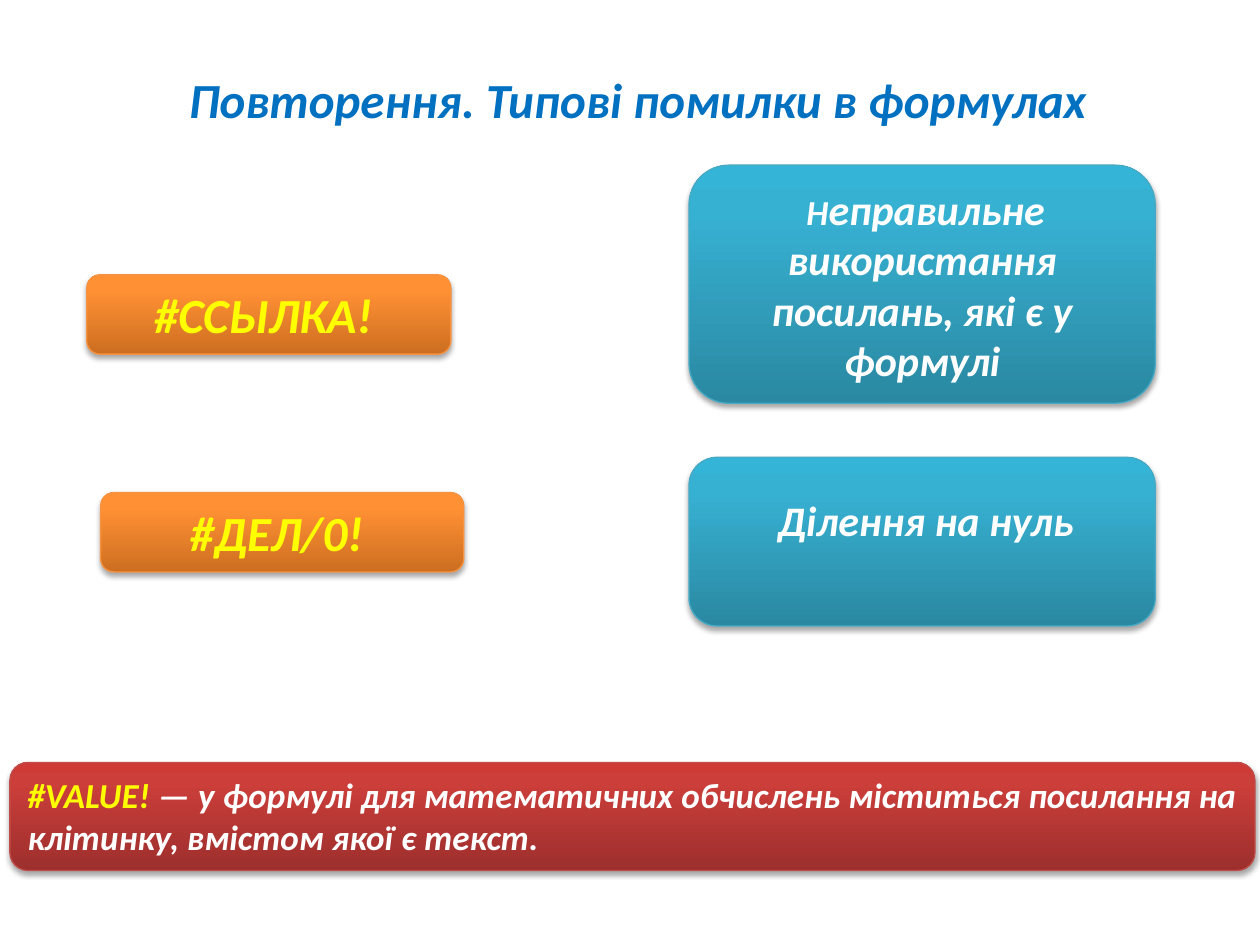
"""Build a slide that reviews typical spreadsheet formula errors."""
from dataclasses import dataclass
from typing import NamedTuple

from lxml.etree import fromstring
from pptx import Presentation
from pptx.dml.color import RGBColor
from pptx.enum.shapes import MSO_SHAPE as Preset
from pptx.enum.text import MSO_ANCHOR as Anchor
from pptx.enum.text import MSO_AUTO_SIZE as Fit
from pptx.enum.text import PP_ALIGN as Align
from pptx.oxml.ns import nsdecls
from pptx.util import Cm, Pt

COLORS = {
    "title": "0070C0",
    "title_edge": "1E7CEE",
    "code": "FFFF00",
    "text": "FFFFFF",
    "shadow": "000000",
    "orange_line": "F69240",
    "red_line": "BF4C48",
    "teal_line": "46AAC5",
    "orange_dark": "CC6E20",
    "orange_mid": "FF9034",
    "orange_light": "FF9136",
    "red_dark": "9C2F2D",
    "red_mid": "CB3E3A",
    "red_light": "CE3B37",
    "teal_dark": "2A88A2",
    "teal_mid": "37B1D2",
    "teal_light": "34B4D6",
}
STOPS = {"dark": 0, "mid": 80000, "light": 100000}
FONT_FORMAT = {"name": "Calibri", "bold": True, "italic": True}
GROWING = {"word_wrap": True, "auto_size": Fit.SHAPE_TO_FIT_TEXT, "vertical_anchor": Anchor.TOP}
CENTERED = {"word_wrap": True, "auto_size": Fit.NONE, "vertical_anchor": Anchor.MIDDLE}
TITLE_FORMAT = {"word_wrap": False, "auto_size": Fit.SHAPE_TO_FIT_TEXT}


class Span(NamedTuple):
    """A piece of text with its size in points and its colour name."""

    text: str
    size: int
    color: str


@dataclass
class Card:
    """A rounded card, with its place in centimetres."""

    place: tuple[float, float, float, float]
    tone: str
    spans: list[Span]
    frame_format: dict
    align: Align = Align.CENTER


CARDS = [
    Card((1.75, 5.54, 7.34, 1.6), "orange", [Span("#ССЬІЛКА! ", 28, "code")], GROWING),
    Card((2.03, 9.93, 7.32, 1.6), "orange", [Span("#ДЕЛ/0! ", 28, "code")], GROWING),
    Card(
        (0.2, 15.37, 25.1, 2.18),
        "red",
        [
            Span("#VALUE! ", 20, "code"),
            Span(
                "— у формулі для математичних обчислень міститься посилання на "
                "клітинку, вмістом якої є текст.",
                20,
                "text",
            ),
        ],
        GROWING,
        Align.JUSTIFY,
    ),
    Card(
        (13.89, 3.33, 9.4, 4.8),
        "teal",
        [
            Span(" ", 18, "text"),
            Span("Н", 20, "text"),
            Span("еправильне використання посилань, які є у формулі", 24, "text"),
        ],
        CENTERED,
    ),
    Card(
        (13.89, 9.22, 9.4, 3.4),
        "teal",
        [Span(" ", 18, "text"), Span("Ділення на нуль", 24, "text")],
        CENTERED | {"margin_bottom": Cm(0.99)},
    ),
]


def apply_format(target, values: dict) -> None:
    """Set each named attribute on the target."""
    for name, value in values.items():
        setattr(target, name, value)


def write_spans(box, spans: list[Span], align: Align, frame_format: dict) -> None:
    """Write the spans as the one paragraph of a box."""
    apply_format(box.text_frame, frame_format)
    para = box.text_frame.paragraphs[0]
    para.alignment = align
    for span in spans:
        run = para.add_run()
        run.text = span.text
        apply_format(run.font, FONT_FORMAT | {"size": Pt(span.size)})
        run.font.color.rgb = RGBColor.from_string(COLORS[span.color])


def paint_card(box, tone: str) -> None:
    """Give a box its gradient, line and soft shadow."""
    stops = "".join(
        f'<a:gs pos="{position}"><a:srgbClr val="{COLORS[f"{tone}_{shade}"]}"/></a:gs>'
        for shade, position in STOPS.items()
    )
    gradient = fromstring(
        f'<a:gradFill {nsdecls("a")} rotWithShape="1"><a:gsLst>{stops}</a:gsLst>'
        '<a:lin ang="16200000" scaled="0"/></a:gradFill>'
    )
    shadow = fromstring(
        f'<a:outerShdw {nsdecls("a")} blurRad="{Pt(3.1)}" dist="{Pt(1.8)}" dir="5400000" '
        f'rotWithShape="0"><a:srgbClr val="{COLORS["shadow"]}"><a:alpha val="35000"/>'
        "</a:srgbClr></a:outerShdw>"
    )
    box.fill.background()
    box.line.color.rgb = RGBColor.from_string(COLORS[f"{tone}_line"])
    box.line.width = Pt(0.75)
    box.shadow.inherit = False
    properties = box.element.spPr
    properties.replace(properties.find("{*}noFill"), gradient)
    properties.find("{*}effectLst").append(shadow)


def add_card(page, card: Card) -> None:
    """Draw one card with its text."""
    box = page.shapes.add_shape(Preset.ROUNDED_RECTANGLE, *map(Cm, card.place))
    paint_card(box, card.tone)
    write_spans(box, card.spans, card.align, card.frame_format)


def add_title(page) -> None:
    """Draw the title with its hairline letter edge."""
    box = page.shapes.add_textbox(Cm(3.4), Cm(1.27), Cm(18.9), Cm(1.45))
    title = Span("Повторення. Типові помилки в формулах", 28, "title")
    write_spans(box, [title], Align.CENTER, TITLE_FORMAT)
    edge = fromstring(
        f'<a:ln {nsdecls("a")} w="{Pt(0.07)}"><a:solidFill>'
        f'<a:srgbClr val="{COLORS["title_edge"]}"><a:alpha val="55000"/></a:srgbClr>'
        '</a:solidFill><a:prstDash val="solid"/></a:ln>'
    )
    box.element.find(".//{*}rPr").insert(0, edge)


def main() -> None:
    """Build and save the deck."""
    deck = Presentation()
    apply_format(deck, {"slide_width": Cm(25.4), "slide_height": Cm(19.05)})
    page = deck.slides.add_slide(deck.slide_layouts[6])
    add_title(page)
    for card in CARDS:
        add_card(page, card)
    deck.save("out.pptx")


if __name__ == "__main__":
    main()
